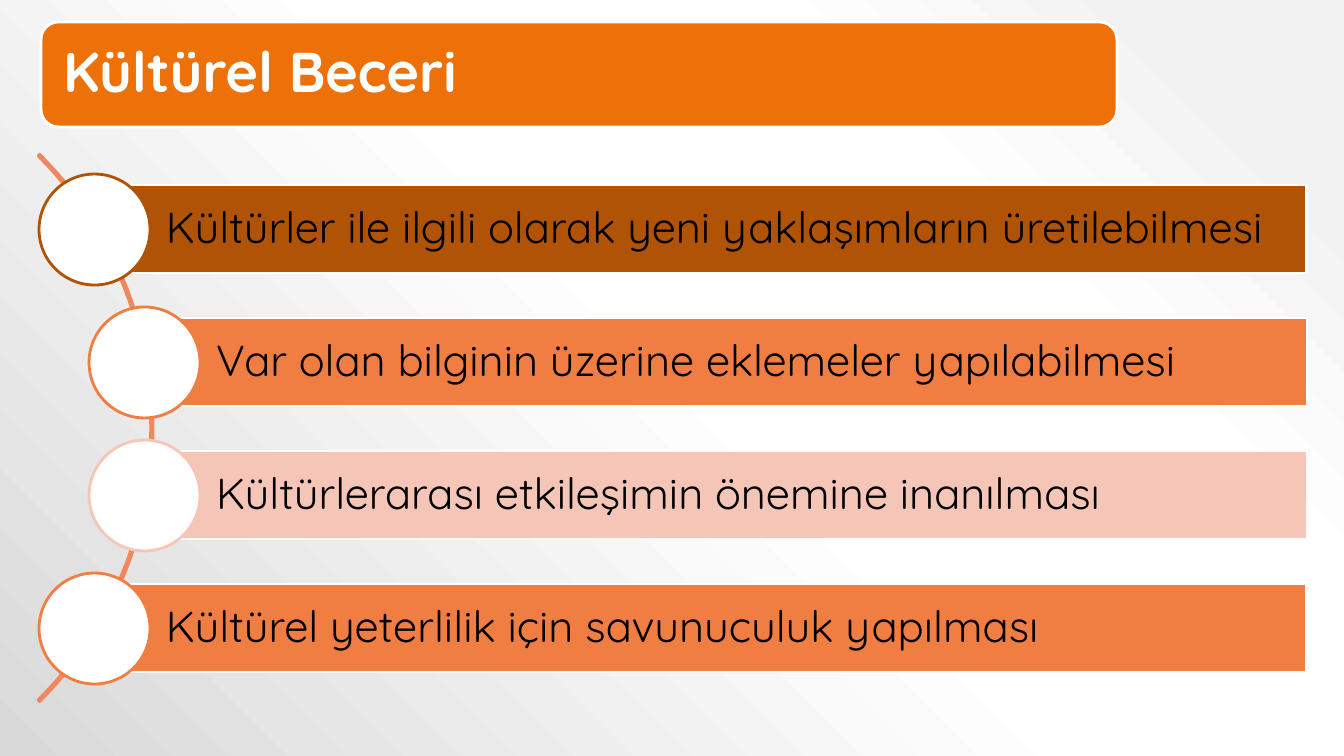
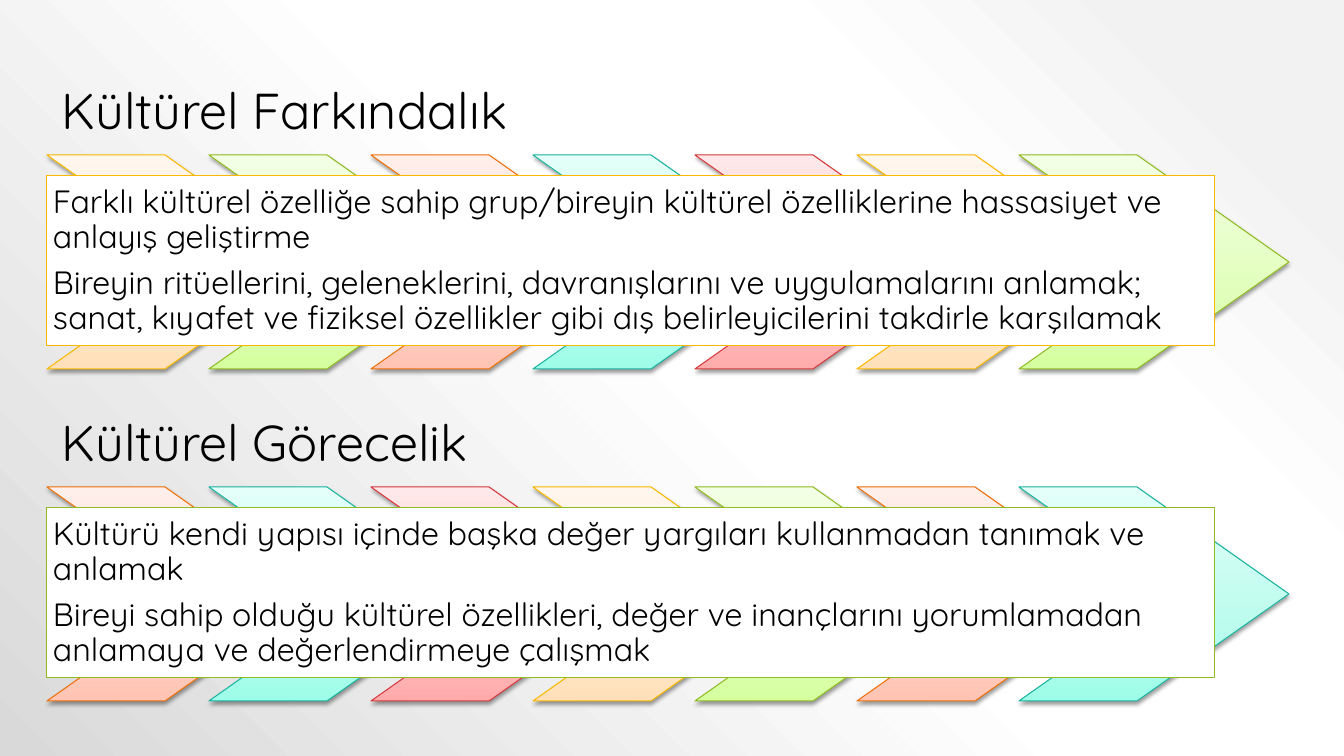
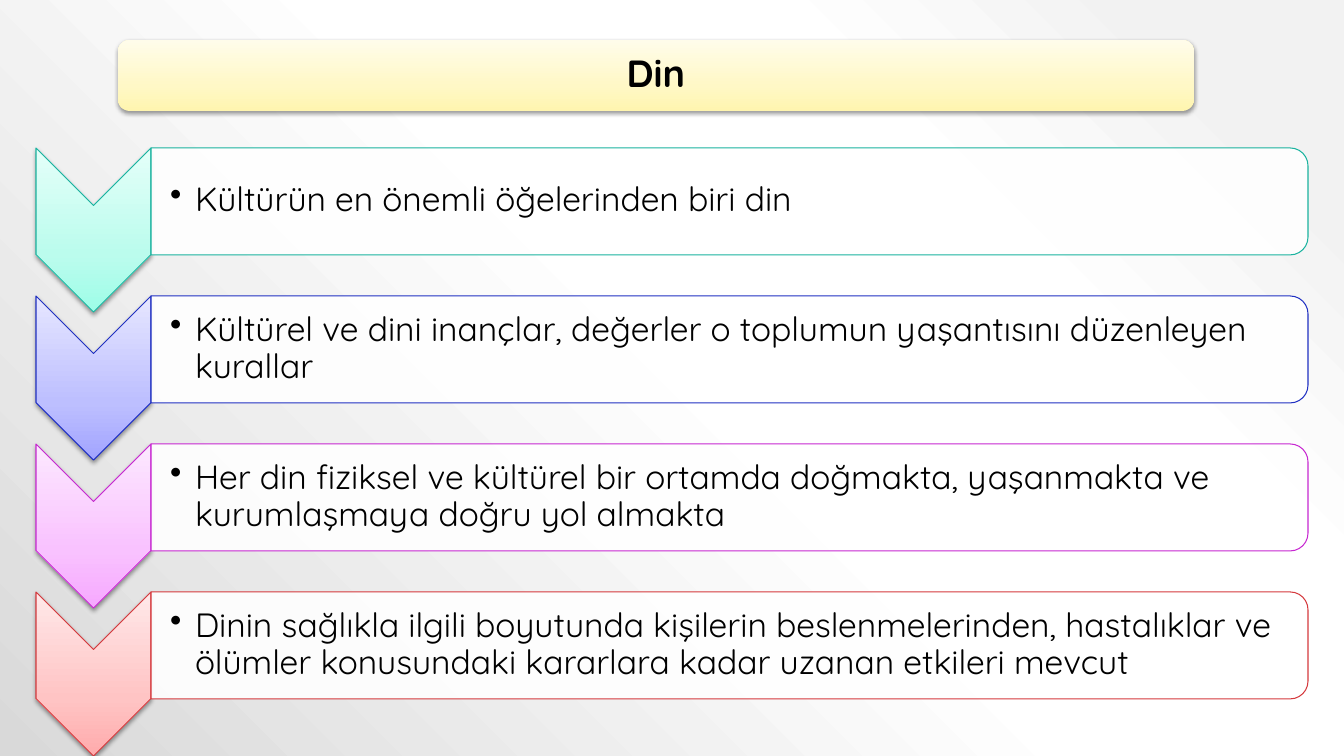
from itertools import cycle, islice

from pptx import Presentation
from pptx.dml.color import RGBColor
from pptx.enum.shapes import MSO_SHAPE
from pptx.enum.text import MSO_ANCHOR, PP_ALIGN
from pptx.oxml import parse_xml
from pptx.oxml.ns import nsdecls, qn
from pptx.util import Emu, Pt

WIDTH, HEIGHT = 1344, 756
EMU_PER_PX = 12192000 / WIDTH
FONT = "Quicksand"
WHITE, BLACK, ORANGE = "FFFFFF", "000000", "EE7008"
BROWN, CORAL, PINK, ARC_LINE = "B05306", "F07D41", "F5C5B7", "F0885E"
PAGE_STOPS = [(10, "F2F2F2"), (28, WHITE), (48, WHITE), (100, "D9D9D9")]
CORNER = '<a:path path="circle"><a:fillToRect l="100000" b="100000"/></a:path>'
UPWARD = '<a:lin ang="16200000" scaled="1"/>'
TINT_POSITIONS = (0, 35, 100)
CREAM = ("FFF5AF", "FFF8C6", "FFFCEA")
YELLOW = ("FAB900", ("FFE0BA", "FFE8CF", "FFF6ED"))
GREEN = ("90BB23", ("D5FF9F", "E1FFBB", "F3FFE5"))
AMBER = (ORANGE, ("FFC4B4", "FFD5CA", "FFEFEB"))
TEAL = ("1AB39F", ("9DFDE8", "BBFCED", "E4FFF9"))
RED = ("D5393D", ("FFABAC", "FFC4C4", "FFE8E9"))
BLUE = ("2030C2", ("A2A4FF", "BDBFFF", "E6E6FF"))
PURPLE = ("C727D1", ("F6A8FF", "F9C2FF", "FCE8FF"))

SKILLS = [
    ("Kültürler ile ilgili olarak yeni yaklaşımların üretilebilmesi", BROWN, 95),
    ("Var olan bilginin üzerine eklemeler yapılabilmesi", CORAL, 145),
    ("Kültürlerarası etkileşimin önemine inanılması", PINK, 145),
    ("Kültürel yeterlilik için savunuculuk yapılması", CORAL, 95),
]
AWARENESS = [
    "Farklı kültürel özelliğe sahip grup/bireyin kültürel özelliklerine "
    "hassasiyet ve anlayış geliştirme",
    "Bireyin ritüellerini, geleneklerini, davranışlarını ve uygulamalarını anlamak; "
    "sanat, kıyafet ve fiziksel özellikler gibi dış belirleyicilerini takdirle karşılamak",
]
RELATIVITY = [
    "Kültürü kendi yapısı içinde başka değer yargıları kullanmadan tanımak ve anlamak",
    "Bireyi sahip olduğu kültürel özellikleri, değer ve inançlarını yorumlamadan "
    "anlamaya ve değerlendirmeye çalışmak",
]
RELIGION = [
    ("Kültürün en önemli öğelerinden biri din", TEAL),
    ("Kültürel ve dini inançlar, değerler o toplumun yaşantısını düzenleyen kurallar", BLUE),
    ("Her din fiziksel ve kültürel bir ortamda doğmakta, yaşanmakta ve "
     "kurumlaşmaya doğru yol almakta", PURPLE),
    ("Dinin sağlıkla ilgili boyutunda kişilerin beslenmelerinden, hastalıklar ve "
     "ölümler konusundaki kararlara kadar uzanan etkileri mevcut", RED),
]


def px(length):
    """Turn px into EMU."""
    return Emu(round(length * EMU_PER_PX))


def colour(value):
    """Turn a hex string into a colour."""
    return RGBColor.from_string(value)


def assign(target, values):
    """Set each attribute named in a dict."""
    for name, value in values.items():
        setattr(target, name, value)


def paint_gradient(fill, owner, stops, direction):
    """Give a fill any number of stops and a direction."""
    fill.gradient()
    plain = next(owner.iter(qn("a:gradFill")))
    marks = "".join(
        f'<a:gs pos="{position * 1000}"><a:srgbClr val="{tint}"/></a:gs>'
        for position, tint in stops
    )
    plain.getparent().replace(plain, parse_xml(
        f'<a:gradFill {nsdecls("a")} rotWithShape="0">'
        f"<a:gsLst>{marks}</a:gsLst>{direction}</a:gradFill>"
    ))


def paint_tints(shape, tints):
    """Shade a shape from the bottom up and give it a soft shadow."""
    paint_gradient(shape.fill, shape.element, zip(TINT_POSITIONS, tints), UPWARD)
    shape.element.spPr.find(qn("a:effectLst")).append(parse_xml(
        f'<a:outerShdw {nsdecls("a")} blurRad="40000" dist="20000" dir="5400000" '
        'rotWithShape="0"><a:srgbClr val="000000"><a:alpha val="38000"/>'
        "</a:srgbClr></a:outerShdw>"
    ))


def add_figure(page, kind, box, fill=None, line=None, weight=0.75, turned=False):
    """Add a preset shape that covers the box, turned a quarter if asked."""
    left, top, width, height = box
    if turned:
        left, top = left + (width - height) / 2, top + (height - width) / 2
        width, height = height, width
    shape = page.shapes.add_shape(kind, *map(px, (left, top, width, height)))
    shape.rotation = 90 if turned else 0
    shape.shadow.inherit = False
    if fill is None:
        shape.fill.background()
    elif isinstance(fill, tuple):
        paint_tints(shape, fill)
    else:
        shape.fill.solid()
        shape.fill.fore_color.rgb = colour(fill)
    if line:
        shape.line.color.rgb = colour(line)
        shape.line.width = Pt(weight)
    else:
        shape.line.fill.background()
    return shape


def write(shape, texts, size, insets, ink=BLACK, bold=False,
          anchor=MSO_ANCHOR.MIDDLE, align=PP_ALIGN.LEFT):
    """Write paragraphs in a shape or text box."""
    frame = shape.text_frame
    sides = ("margin_left", "margin_top", "margin_right", "margin_bottom")
    assign(frame, {"word_wrap": True, "vertical_anchor": anchor,
                   **dict(zip(sides, map(px, insets)))})
    for index, text in enumerate(texts):
        para = frame.add_paragraph() if index else frame.paragraphs[0]
        assign(para, {"alignment": align, "line_spacing": 0.9,
                      "space_after": Pt(round(size * 0.35))})
        span = para.add_run()
        span.text = text
        assign(span.font, {"name": FONT, "size": Pt(size), "bold": bold})
        span.font.color.rgb = colour(ink)


def add_text(page, box, texts, size, insets, **style):
    """Add a text box."""
    shape = page.shapes.add_textbox(*map(px, box))
    write(shape, texts, size, insets, **style)
    return shape


def add_bullets(shape):
    """Put a hanging bullet before each paragraph."""
    for para in shape.text_frame.paragraphs:
        properties = para._p.get_or_add_pPr()
        properties.set("marL", str(px(25)))
        properties.set("indent", str(px(-25)))
        properties.append(parse_xml(f'<a:buChar {nsdecls("a")} char="•"/>'))


def add_banner(page, box, title, size, fill, line=None, **style):
    """Add a rounded title band."""
    banner = add_figure(page, MSO_SHAPE.ROUNDED_RECTANGLE, box, fill, line, 2)
    write(banner, [title], size, (17, 11, 17, 11), bold=True, **style)


def add_skill(page, top, text, tint, left):
    """Add a bar with a circle at its left end."""
    bar = add_figure(page, MSO_SHAPE.RECTANGLE, (left, top, 1307 - left, 88), tint, WHITE, 2)
    write(bar, [text], 31, (71, 9, 9, 9))
    add_figure(page, MSO_SHAPE.OVAL, (left - 56, top - 11, 111, 111), WHITE, tint, 2)


def add_chevron_panel(page, top, heading, texts, palette, frame_line):
    """Add a heading and a text panel over a row of chevrons."""
    add_text(page, (47, top, 1153, 105), [heading], 36, (15, 15, 15, 15),
             anchor=MSO_ANCHOR.BOTTOM)
    for index, (line, tints) in enumerate(islice(cycle(palette), 7)):
        chevron = add_figure(page, MSO_SHAPE.CHEVRON,
                             (47 + 162 * index, top + 105, 270, 214), tints, line)
        chevron.adjustments[0] = 0.71
    panel = add_figure(page, MSO_SHAPE.RECTANGLE, (47, top + 126, 1168, 170), WHITE, frame_line)
    write(panel, texts, 23, (6, 6, 6, 6))


def add_step(page, top, text, line, tints):
    """Add a downward chevron and its bulleted panel."""
    add_figure(page, MSO_SHAPE.CHEVRON, (36, top, 115, 164), tints, line, turned=True)
    panel = add_figure(page, MSO_SHAPE.ROUND_2_SAME_RECTANGLE, (151, top, 1157, 107),
                       WHITE, line, turned=True)
    tint = panel.element.spPr.find(qn("a:solidFill"))[0]
    tint.append(parse_xml(f'<a:alpha {nsdecls("a")} val="90000"/>'))
    add_bullets(add_text(page, (151, top + 5, 1152, 96), [text], 24, (19, 2, 2, 2)))


def build_skill_page(page):
    """Fill the cultural skill slide."""
    add_banner(page, (41, 22, 1076, 105), "Kültürel Beceri", 40, ORANGE, WHITE, ink=WHITE)
    arc = add_figure(page, MSO_SHAPE.BLOCK_ARC, (-621, 41, 774, 774), None, ARC_LINE, 2)
    for index, value in enumerate((189, 27, 0.003)):
        arc.adjustments[index] = value
    for index, skill in enumerate(SKILLS):
        add_skill(page, 185 + 133 * index, *skill)


def build_awareness_page(page):
    """Fill the awareness and relativity slide."""
    palette = [YELLOW, GREEN, AMBER, TEAL, RED]
    add_chevron_panel(page, 50, "Kültürel Farkındalık", AWARENESS, palette, YELLOW[0])
    add_chevron_panel(page, 382, "Kültürel Görecelik", RELATIVITY,
                      palette[2:] + palette[:2], GREEN[0])


def build_religion_page(page):
    """Fill the religion slide."""
    for index, (text, (line, tints)) in enumerate(RELIGION):
        add_step(page, 148 + 148 * index, text, line, tints)
    add_banner(page, (118, 40, 1076, 71), "Din", 27, CREAM, align=PP_ALIGN.CENTER)


def main():
    """Build and save the deck."""
    deck = Presentation()
    assign(deck, {"slide_width": px(WIDTH), "slide_height": px(HEIGHT)})
    master = deck.slide_master
    paint_gradient(master.background.fill, master.element, PAGE_STOPS, CORNER)
    for build in (build_skill_page, build_awareness_page, build_religion_page):
        build(deck.slides.add_slide(deck.slide_layouts[6]))
    deck.save("out.pptx")


if __name__ == "__main__":
    main()
